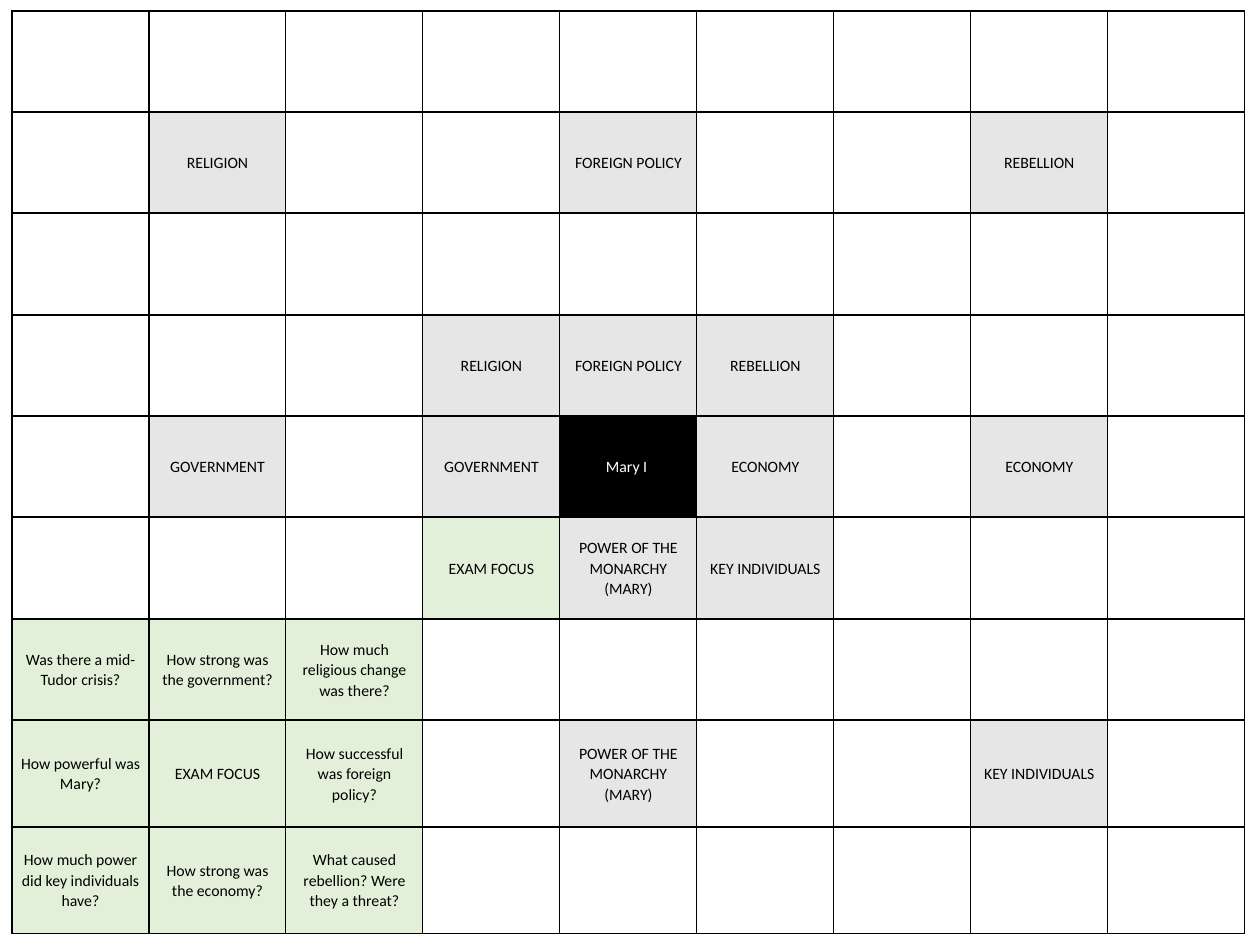
from lxml.etree import SubElement
from pptx import Presentation
from pptx.dml.color import RGBColor
from pptx.enum.text import MSO_ANCHOR, PP_ALIGN
from pptx.oxml.ns import qn
from pptx.util import Pt

SCALE = 914400 / 126  # EMU in one px
GREY, GREEN, BLACK, WHITE = "E7E6E6", "E2F0D9", "000000", "FFFFFF"

COLUMN_WIDTHS = [137] * 9
ROW_HEIGHTS = [101, 101, 102, 101, 101, 102, 101, 107, 107]

# The centre block names each theme; the same theme sits at the middle
# of the outer block lying in the same direction.
CENTRE = 4
THEMES = {
    (-1, -1): "RELIGION",
    (-1, 0): "FOREIGN POLICY",
    (-1, 1): "REBELLION",
    (0, -1): "GOVERNMENT",
    (0, 1): "ECONOMY",
    (1, -1): "EXAM FOCUS",
    (1, 0): "POWER OF THE MONARCHY\n(MARY)",
    (1, 1): "KEY INDIVIDUALS",
}
EXAM_QUESTIONS = {
    (6, 0): "Was there a mid-Tudor crisis?",
    (6, 1): "How strong was the government?",
    (6, 2): "How much religious change was there?",
    (7, 0): "How powerful was Mary?",
    (7, 2): "How successful was foreign policy?",
    (8, 0): "How much power did key individuals have?",
    (8, 1): "How strong was the economy?",
    (8, 2): "What caused rebellion? Were they a threat?",
}


def px(length):
    return round(length * SCALE)


def color(hex_string):
    return RGBColor.from_string(hex_string)


def draw_borders(cell, width=0.75):
    properties = cell._tc.get_or_add_tcPr()
    for side in ("a:lnL", "a:lnR", "a:lnT", "a:lnB"):
        line = SubElement(properties, qn(side), w=str(Pt(width)))
        fill = SubElement(line, qn("a:solidFill"))
        SubElement(fill, qn("a:srgbClr"), val=BLACK)


def write_cell(cell, text, fill, text_color=BLACK):
    cell.fill.solid()
    cell.fill.fore_color.rgb = color(fill)
    cell.vertical_anchor = MSO_ANCHOR.MIDDLE
    cell.margin_left = cell.margin_right = px(8)
    cell.margin_top = cell.margin_bottom = 0
    para = cell.text_frame.paragraphs[0]
    para.text = text
    para.alignment = PP_ALIGN.CENTER
    para.line_spacing = 1.07
    para.font.name = "Calibri"
    para.font.size = Pt(9)
    para.font.color.rgb = color(text_color)


def add_topic_grid(page, left, top):
    # Empty ruled grid
    frame = page.shapes.add_table(
        len(ROW_HEIGHTS), len(COLUMN_WIDTHS), px(left), px(top),
        px(sum(COLUMN_WIDTHS)), px(sum(ROW_HEIGHTS)))
    table = frame.table
    table.first_row = table.horz_banding = False
    for column, width in zip(table.columns, COLUMN_WIDTHS):
        column.width = px(width)
    for row, height in zip(table.rows, ROW_HEIGHTS):
        row.height = px(height)
    for cell in table.iter_cells():
        draw_borders(cell)
        cell.fill.background()

    # Subject and its themes, near the centre and in the outer blocks
    write_cell(table.cell(CENTRE, CENTRE), "Mary I ", BLACK, WHITE)
    for (down, across), theme in THEMES.items():
        fill = GREEN if theme == "EXAM FOCUS" else GREY
        for reach in (1, 3):
            cell = table.cell(CENTRE + reach * down, CENTRE + reach * across)
            write_cell(cell, theme, fill)

    # Questions around the exam focus
    for (row, column), question in EXAM_QUESTIONS.items():
        write_cell(table.cell(row, column), question, GREEN)


def main():
    deck = Presentation()
    deck.slide_width, deck.slide_height = px(1260), px(945)
    page = deck.slides.add_slide(deck.slide_layouts[6])
    add_topic_grid(page, left=12, top=11)
    deck.save("out.pptx")


if __name__ == "__main__":
    main()
